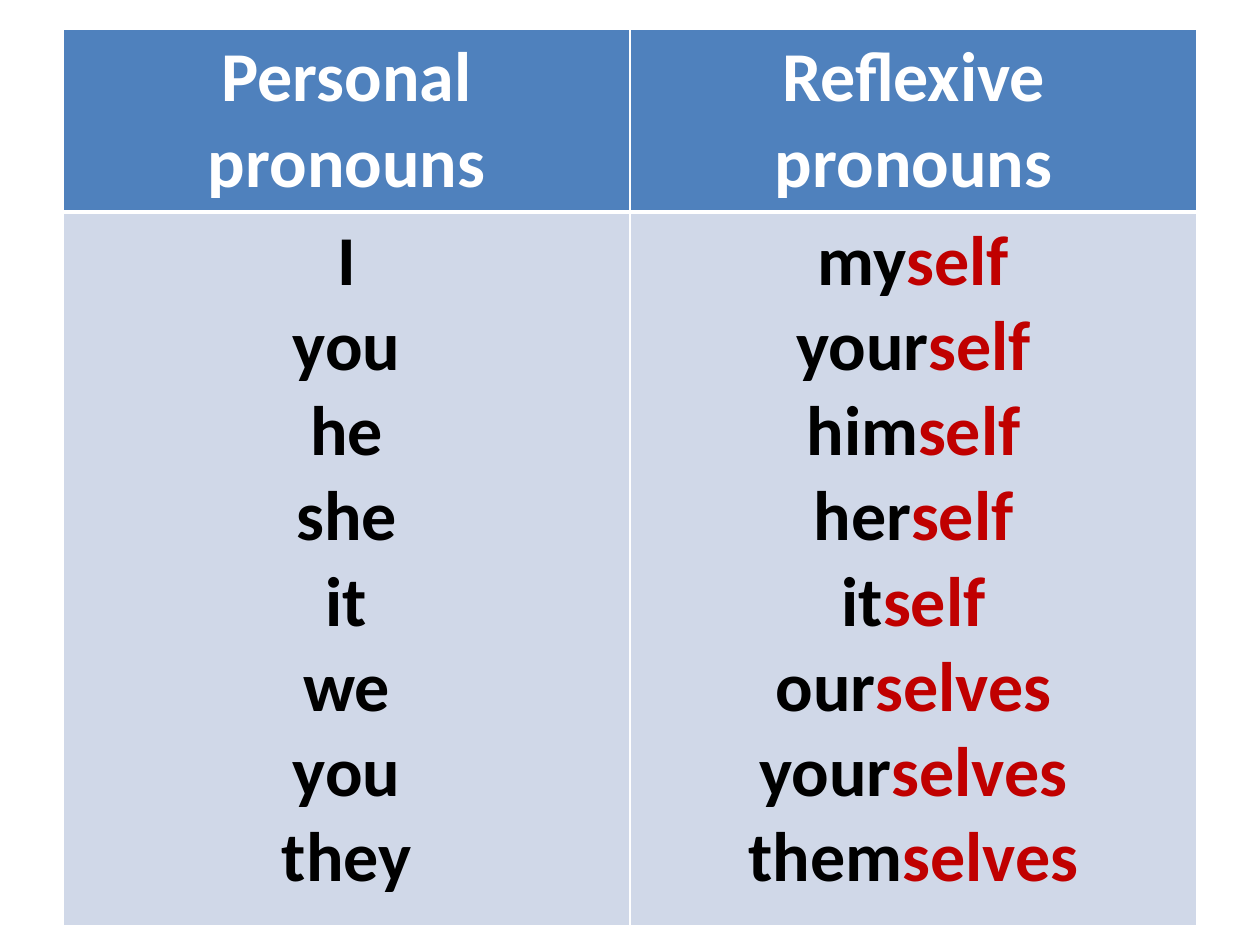
from lxml.etree import SubElement
from pptx import Presentation
from pptx.dml.color import RGBColor
from pptx.enum.text import PP_ALIGN
from pptx.oxml.ns import qn
from pptx.util import Inches, Pt


def color(hex_code):
    return RGBColor.from_string(hex_code)


def set_borders(cell, widths):
    properties = cell._tc.get_or_add_tcPr()
    for position, (side, points) in enumerate(widths.items()):
        line = properties.makeelement(qn(f"a:{side}"), {"w": str(Pt(points))})
        SubElement(SubElement(line, qn("a:solidFill")), qn("a:srgbClr"), val="FFFFFF")
        properties.insert(position, line)


HEADINGS = ["Personal pronouns", "Reflexive pronouns"]
PRONOUNS = [
    ("I", "my", "self"),
    ("you", "your", "self"),
    ("he", "him", "self"),
    ("she", "her", "self"),
    ("it", "it", "self"),
    ("we", "our", "selves"),
    ("you", "your", "selves"),
    ("they", "them", "selves"),
]

presentation = Presentation()
presentation.slide_width, presentation.slide_height = Inches(10), Inches(7.5)
slide = presentation.slides.add_slide(presentation.slide_layouts[6])

# Table grid
pronoun_table = slide.shapes.add_table(
    2, 2, Inches(0.5), Inches(0.23), Inches(9), Inches(7.03)
).table
pronoun_table.rows[0].height = Inches(1.37)
pronoun_table.rows[1].height = Inches(5.66)

# Wording: each paragraph is a list of (text, colour) runs
heading_cells = [[[(heading, "FFFFFF")]] for heading in HEADINGS]
personal = [[(pronoun, "000000")] for pronoun, _, _ in PRONOUNS]
reflexive = [[(stem, "000000"), (ending, "C00000")] for _, stem, ending in PRONOUNS]

# Cells: fill, borders and text
rows = [
    (heading_cells, "4F81BD", {"lnL": 1, "lnR": 1, "lnT": 1, "lnB": 3}),
    ([personal, reflexive], "D0D8E8", {"lnL": 1, "lnR": 1, "lnT": 3, "lnB": 1}),
]
for row_index, (contents, fill_color, border_widths) in enumerate(rows):
    for column_index, lines in enumerate(contents):
        cell = pronoun_table.cell(row_index, column_index)
        cell.fill.solid()
        cell.fill.fore_color.rgb = color(fill_color)
        set_borders(cell, border_widths)
        for line_index, parts in enumerate(lines):
            frame = cell.text_frame
            paragraph = frame.add_paragraph() if line_index else frame.paragraphs[0]
            paragraph.alignment = PP_ALIGN.CENTER
            for text, text_color in parts:
                run = paragraph.add_run()
                run.text = text
                run.font.name = "Calibri"
                run.font.size = Pt(40)
                run.font.bold = True
                run.font.color.rgb = color(text_color)

presentation.save("out.pptx")
